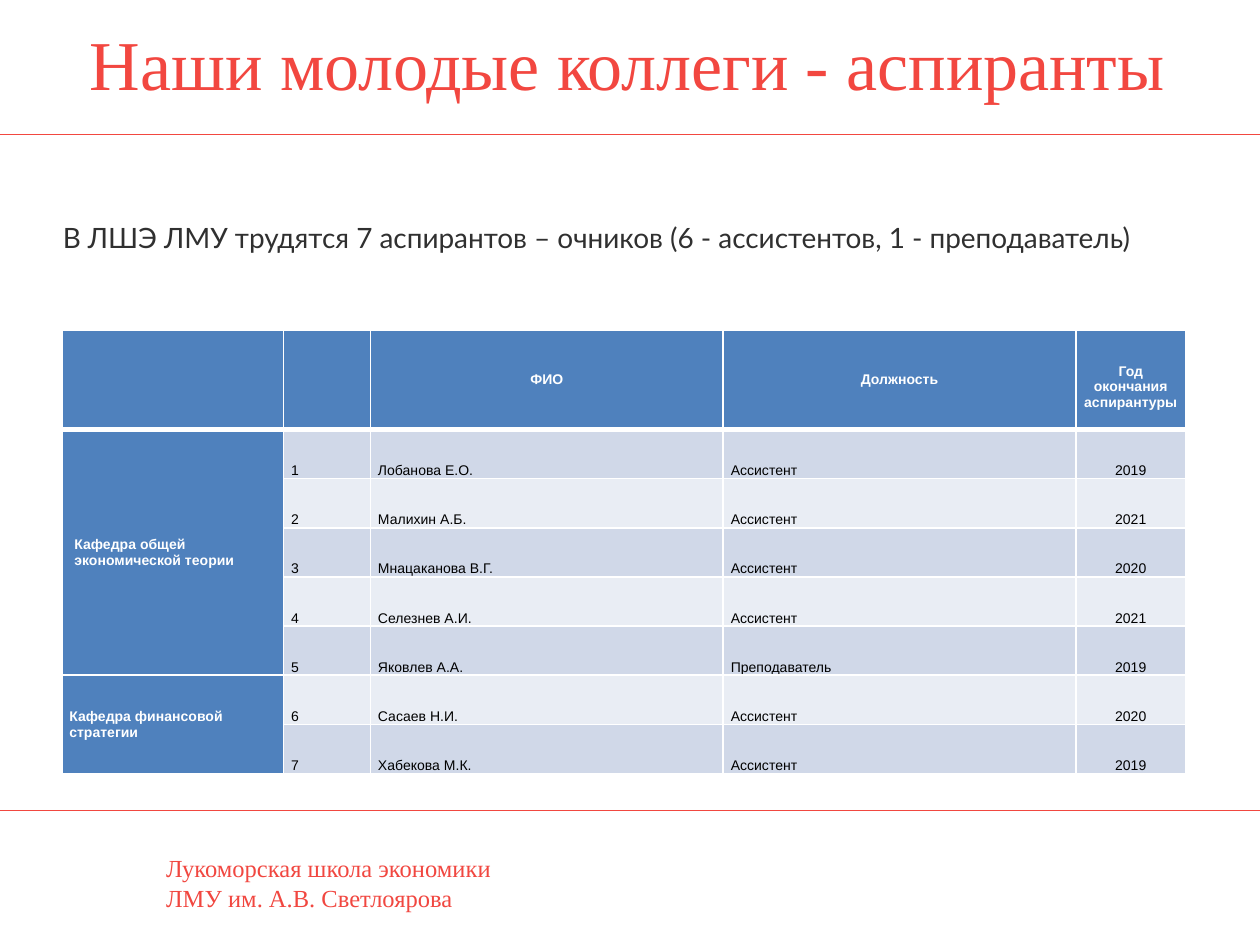
from lxml import etree
from pptx import Presentation
from pptx.dml.color import RGBColor
from pptx.enum import shapes, text
from pptx.oxml import ns
from pptx.util import Inches, Pt

RED = RGBColor(0xF2, 0x47, 0x40)
FOOTER_RED = RGBColor(0xF1, 0x47, 0x40)
GREY = RGBColor(0x30, 0x30, 0x30)
BLUE = RGBColor(0x4F, 0x81, 0xBD)
BANDS = [RGBColor(0xD0, 0xD8, 0xE8), RGBColor(0xE9, 0xED, 0xF4)]
WHITE = RGBColor(0xFF, 0xFF, 0xFF)
BLACK = RGBColor(0, 0, 0)
LEFT, CENTER = text.PP_ALIGN.LEFT, text.PP_ALIGN.CENTER
MIDDLE, BOTTOM = text.MSO_ANCHOR.MIDDLE, text.MSO_ANCHOR.BOTTOM


def add_span(para, words, font, size, color, bold=False):
    span = para.add_run()
    span.text = words
    span.font.name = font
    span.font.size = Pt(size)
    span.font.bold = bold
    span.font.color.rgb = color


def fill_cell(cell, words, color, fill, align, anchor, bold, top_border, bottom_border):
    props = cell._tc.get_or_add_tcPr()
    for side, points in (("L", 1), ("R", 1), ("T", top_border), ("B", bottom_border)):
        border = etree.SubElement(props, ns.qn("a:ln" + side), w=str(Pt(points)))
        solid = etree.SubElement(border, ns.qn("a:solidFill"))
        etree.SubElement(solid, ns.qn("a:srgbClr"), val=str(WHITE))
    cell.fill.solid()
    cell.fill.fore_color.rgb = fill
    cell.margin_left = cell.margin_right = Inches(0.06)
    cell.margin_top = cell.margin_bottom = 0
    cell.vertical_anchor = anchor
    if words:
        para = cell.text_frame.paragraphs[0]
        para.alignment = align
        add_span(para, words, "Arial", 8, color, bold)


deck = Presentation()
deck.slide_width, deck.slide_height = Inches(10), Inches(7.5)
page = deck.slides.add_slide(deck.slide_layouts[5])
for holder in list(page.placeholders):
    if holder != page.shapes.title:
        holder._element.getparent().remove(holder._element)

# Title
title = page.shapes.title
title.left, title.top, title.width, title.height = map(Inches, (0.55, 0.11, 8.86, 0.88))
title.text_frame.margin_bottom = Inches(0.16)
para = title.text_frame.paragraphs[0]
para.alignment = CENTER
add_span(para, "Наши молодые коллеги - аспиранты", "Times New Roman", 40, RED)

# Rules below the title and above the footer
for y, color in ((1.07, RED), (6.43, FOOTER_RED)):
    rule = page.shapes.add_connector(
        shapes.MSO_CONNECTOR.STRAIGHT, 0, Inches(y), deck.slide_width, Inches(y))
    rule.line.color.rgb = color
    rule.line.width = Pt(0.5)
    etree.SubElement(rule._element.spPr, ns.qn("a:effectLst"))

# Introduction
box = page.shapes.add_textbox(Inches(0.4), Inches(1.44), Inches(9), Inches(1.18))
box.text_frame.word_wrap = True
box.text_frame.margin_top = Inches(0.31)
add_span(box.text_frame.paragraphs[0],
         "В ЛШЭ ЛМУ трудятся 7 аспирантов – очников (6 - ассистентов, 1 - преподаватель)",
         "Lato", 16, GREY)

# Table of postgraduates
headers = ["", "", "ФИО", "Должность", "Год окончания аспирантуры"]
people = [
    ("Лобанова Е.О.", "Ассистент", "2019"),
    ("Малихин А.Б.", "Ассистент", "2021"),
    ("Мнацаканова В.Г.", "Ассистент", "2020"),
    ("Селезнев А.И.", "Ассистент", "2021"),
    ("Яковлев А.А.", "Преподаватель", "2019"),
    ("Сасаев Н.И.", "Ассистент", "2020"),
    ("Хабекова М.К.", "Ассистент", "2019"),
]
departments = {1: ("Кафедра общей экономической теории", 5),
               6: ("Кафедра финансовой стратегии", 2)}

table = page.shapes.add_table(len(people) + 1, len(headers), Inches(0.49), Inches(2.62),
                              Inches(8.92), Inches(3.54)).table
for column, width in zip(table.columns, (1.76, 0.69, 2.8, 2.8, 0.87)):
    column.width = Inches(width)
for index, row in enumerate(table.rows):
    row.height = Inches(0.39 if index else 0.79)

for col, words in enumerate(headers):
    fill_cell(table.cell(0, col), words, WHITE, BLUE, CENTER, MIDDLE, True, 1, 3)
year_header = table.cell(0, 4)
year_header.vertical_anchor = BOTTOM
year_header.margin_bottom = Inches(0.15)

for row, person in enumerate(people, start=1):
    top_border = 3 if row == 1 else 1
    department, height = departments.get(row, ("", 0))
    fill_cell(table.cell(row, 0), department, WHITE, BLUE, LEFT, MIDDLE, True, top_border, 1)
    if height:
        table.cell(row, 0).merge(table.cell(row + height - 1, 0))
    for col, words in enumerate((str(row), *person), start=1):
        fill_cell(table.cell(row, col), words, BLACK, BANDS[(row - 1) % 2],
                  CENTER if col == 4 else LEFT, BOTTOM, False, top_border, 1)
table.cell(1, 0).margin_left = Inches(0.1)

# Footer
box = page.shapes.add_textbox(Inches(1.22), Inches(6.72), Inches(4.83), Inches(0.57))
box.text_frame.word_wrap = True
box.text_frame.vertical_anchor = BOTTOM
para = box.text_frame.paragraphs[0]
add_span(para, "Лукоморская школа экономики", "Times New Roman", 14, FOOTER_RED)
para = box.text_frame.add_paragraph()
add_span(para, "ЛМУ им. А.В. Светлоярова", "Times New Roman", 14, FOOTER_RED)

deck.save("out.pptx")
